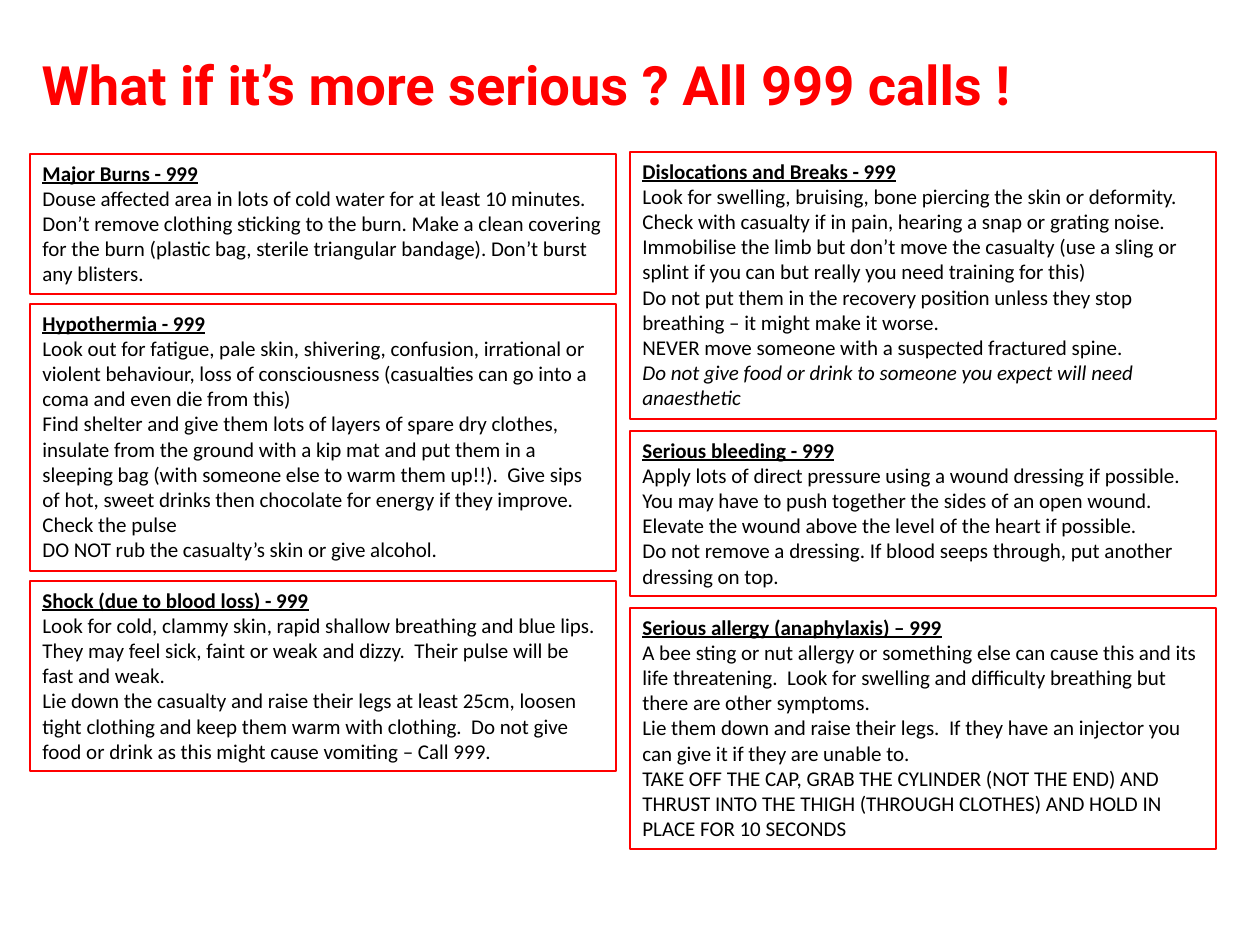
import pptx
import pptx.util
import pptx.dml.color
import pptx.enum.shapes
import pptx.enum.text
from dataclasses import dataclass

HEADLINE = "What if it’s more serious ? All 999 calls !"

LEFT_COLUMN = [
    ("Major Burns - 999", 5, [
        "Douse affected area in lots of cold water for at least 10 minutes.  Don’t remove clothing sticking to the burn. Make a clean covering for the burn (plastic bag, sterile triangular bandage). Don’t burst any blisters.",
    ]),
    ("Hypothermia - 999", 10, [
        "Look out for fatigue, pale skin, shivering, confusion, irrational or violent behaviour, loss of consciousness (casualties can go into a coma and even die from this)",
        "Find shelter and give them lots of layers of spare dry clothes, insulate from the ground with a kip mat and put them in a sleeping bag (with someone else to warm them up!!).  Give sips of hot, sweet drinks then chocolate for energy if they improve.  Check the pulse",
        "DO NOT rub the casualty’s skin or give alcohol.",
    ]),
    ("Shock (due to blood loss) - 999", 7, [
        "Look for cold, clammy skin, rapid shallow breathing and blue lips.  They may feel sick, faint or weak and dizzy.  Their pulse will be fast and weak.",
        "Lie down the casualty and raise their legs at least 25cm, loosen tight clothing and keep them warm with clothing.  Do not give food or drink as this might cause vomiting – Call 999.",
    ]),
]

RIGHT_COLUMN = [
    ("Dislocations and Breaks - 999", 10, [
        "Look for swelling, bruising, bone piercing the skin or deformity.",
        "Check with casualty if in pain, hearing a snap or grating noise.",
        "Immobilise the limb but don’t move the casualty (use a sling or splint if you can but really you need training for this)",
        "Do not put them in the recovery position unless they stop breathing – it might make it worse.",
        "NEVER move someone with a suspected fractured spine.",
        "Do not give food or drink to someone you expect will need anaesthetic",
    ]),
    ("Serious bleeding - 999", 6, [
        "Apply lots of direct pressure using a wound dressing if possible.  You may have to push together the sides of an open wound.  Elevate the wound above the level of the heart if possible.",
        "Do not remove a dressing. If blood seeps through, put another dressing on top.",
    ]),
    ("Serious allergy (anaphylaxis) – 999", 9, [
        "A bee sting or nut allergy or something else can cause this and its life threatening.  Look for swelling and difficulty breathing but there are other symptoms.",
        "Lie them down and raise their legs.  If they have an injector you can give it if they are unable to.",
        "TAKE OFF THE CAP, GRAB THE CYLINDER (NOT THE END) AND THRUST INTO THE THIGH (THROUGH CLOTHES) AND HOLD IN PLACE FOR 10 SECONDS",
    ]),
]

ITALIC_ADVICE = {RIGHT_COLUMN[0][2][-1]}

COLUMNS = [
    {"left": 30, "top": 154, "gap": 10, "cards": LEFT_COLUMN},
    {"left": 630, "top": 152, "gap": 12, "cards": RIGHT_COLUMN},
]
CARD_WIDTH = 586
LINE_HEIGHT = 25.4
CARD_PADDING = 12.6


@dataclass(frozen=True)
class Theme:
    alert: str = "FF0000"
    ink: str = "000000"
    headline_font: str = "Roboto"
    body_font: str = "Calibri"
    headline_size: int = 31
    body_size: int = 12
    border: float = 0.75


THEME = Theme()


def px(count):
    return pptx.util.Emu(round(count * 914400 / 126))


def rgb(code):
    return pptx.dml.color.RGBColor.from_string(code)


def write(paragraph, text, font=THEME.body_font, size=THEME.body_size,
          color=THEME.ink, bold=False, italic=False, underline=False):
    paragraph.alignment = pptx.enum.text.PP_ALIGN.LEFT
    run = paragraph.add_run()
    run.text = text
    run.font.name = font
    run.font.size = pptx.util.Pt(size)
    run.font.color.rgb = rgb(color)
    run.font.bold = bold
    run.font.italic = italic
    run.font.underline = underline


def add_headline(slide):
    headline = slide.shapes.title
    headline.left, headline.top, headline.width, headline.height = map(px, (29, 40, 1062, 87))
    frame = headline.text_frame
    frame.word_wrap = True
    frame.auto_size = pptx.enum.text.MSO_AUTO_SIZE.NONE
    frame.vertical_anchor = pptx.enum.text.MSO_ANCHOR.MIDDLE
    write(frame.paragraphs[0], HEADLINE, font=THEME.headline_font,
          size=THEME.headline_size, color=THEME.alert, bold=True)


def add_card(slide, left, top, height, heading, advice):
    card = slide.shapes.add_shape(pptx.enum.shapes.MSO_SHAPE.RECTANGLE,
                                  px(left), px(top), px(CARD_WIDTH), px(height))
    card.shadow.inherit = False
    card.fill.background()
    card.line.color.rgb = rgb(THEME.alert)
    card.line.width = pptx.util.Pt(THEME.border)
    frame = card.text_frame
    frame.word_wrap = True
    frame.auto_size = pptx.enum.text.MSO_AUTO_SIZE.SHAPE_TO_FIT_TEXT
    frame.vertical_anchor = pptx.enum.text.MSO_ANCHOR.TOP
    write(frame.paragraphs[0], heading, bold=True, underline=True)
    for sentence in advice:
        write(frame.add_paragraph(), sentence, italic=sentence in ITALIC_ADVICE)


def main():
    deck = pptx.Presentation()
    deck.slide_width, deck.slide_height = px(1260), px(945)
    slide = deck.slides.add_slide(deck.slide_layouts[5])
    add_headline(slide)
    for column in COLUMNS:
        top = column["top"]
        for heading, line_count, advice in column["cards"]:
            height = round(CARD_PADDING + LINE_HEIGHT * line_count)
            add_card(slide, column["left"], top, height, heading, advice)
            top += height + column["gap"]
    deck.save("out.pptx")


if __name__ == "__main__":
    main()
